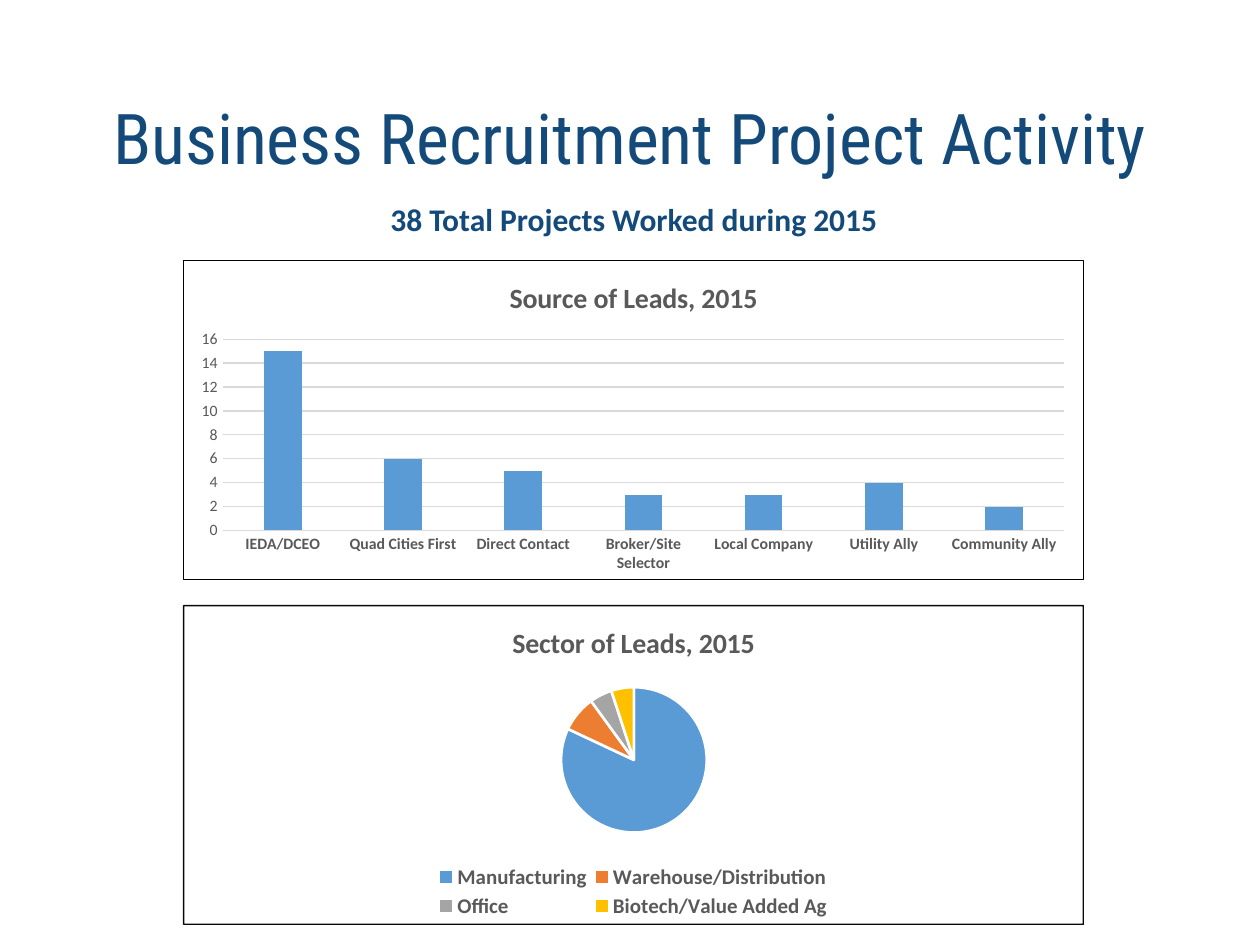
from lxml.etree import SubElement
from pptx import Presentation
from pptx.chart.data import CategoryChartData
from pptx.dml.color import RGBColor
from pptx.enum.chart import XL_CHART_TYPE, XL_LEGEND_POSITION, XL_TICK_MARK
from pptx.enum.text import MSO_ANCHOR, PP_ALIGN
from pptx.oxml import parse_xml
from pptx.oxml.ns import nsdecls, qn
from pptx.util import Pt

hue = RGBColor.from_string
NAVY, GRAY, PALE = "134A7A", "595959", "D9D9D9"


def px(*sizes):
    return [round(size * 914400 / 126) for size in sizes]


def write(frame, text, size, color, face="Calibri", bold=False, lead=None):
    para = frame.paragraphs[0]
    para.alignment = PP_ALIGN.CENTER
    para.line_spacing = lead
    run = para.add_run()
    run.text = text
    run.font.size = Pt(size)
    run.font.name = face
    run.font.bold = bold
    run.font.color.rgb = hue(color)


deck = Presentation()
deck.slide_width, deck.slide_height = px(1260, 945)
slide = deck.slides.add_slide(deck.slide_layouts[6])

title = slide.shapes.add_textbox(*px(0, 50, 1260, 183)).text_frame
title.word_wrap = True
title.vertical_anchor = MSO_ANCHOR.MIDDLE
write(title, "Business Recruitment Project Activity", 40, NAVY, "Roboto Condensed", lead=0.9)

charts = []
for kind, top, name, alpha, points in (
    (XL_CHART_TYPE.PIE, 605, "Sector of Leads, 2015", 96,
     {"Manufacturing": 82, "Warehouse/Distribution": 8, "Office": 5, "Biotech/Value Added Ag": 5}),
    (XL_CHART_TYPE.COLUMN_CLUSTERED, 260, "Source of Leads, 2015", 100,
     {"IEDA/DCEO": 15, "Quad Cities First": 6, "Direct Contact": 5, "Broker/Site Selector": 3,
      "Local Company": 3, "Utility Ally": 4, "Community Ally": 2}),
):
    data = CategoryChartData()
    data.categories = points.keys()
    data.add_series("Series 1", points.values())
    chart = slide.shapes.add_chart(kind, *px(183, top, 901, 320), data).chart
    chart.font.size = Pt(10)
    chart.font.name = "Calibri"
    chart.has_title = True
    write(chart.chart_title.text_frame, name, 16, GRAY, bold=True)
    chart.chart_title.include_in_layout = False
    chart.has_legend = False
    frame = parse_xml(
        f'<c:spPr {nsdecls("c", "a")}><a:solidFill><a:srgbClr val="FFFFFF"/></a:solidFill>'
        f'<a:ln w="9525"><a:solidFill><a:srgbClr val="000000"><a:alpha val="{alpha}000"/>'
        '</a:srgbClr></a:solidFill></a:ln></c:spPr>')
    chart.element.find(qn("c:txPr")).addprevious(frame)
    charts.append(chart)

pie, bars = charts
for point, color in enumerate(("5B9BD5", "ED7D31", "A5A5A5", "FFC000")):
    slice = pie.plots[0].series[0].points[point].format
    slice.fill.solid()
    slice.fill.fore_color.rgb = hue(color)
    slice.line.color.rgb = hue("FFFFFF")
    slice.line.width = Pt(1.5)
pie.has_legend = True
pie.legend.position = XL_LEGEND_POSITION.BOTTOM
pie.legend.include_in_layout = False

plot = bars.plots[0]
plot.vary_by_categories = False
plot.gap_width = 219
plot.overlap = -27
fill = plot.series[0].format.fill
fill.solid()
fill.fore_color.rgb = hue("5B9BD5")

cats, vals = bars.category_axis, bars.value_axis
for part, size, bold in ((cats.tick_labels, 9, True), (vals.tick_labels, 9, False), (pie.legend, 12, True)):
    part.font.size = Pt(size)
    part.font.bold = bold
    part.font.name = "Calibri"
    part.font.color.rgb = hue(GRAY)
for axis in cats, vals:
    axis.major_tick_mark = axis.minor_tick_mark = XL_TICK_MARK.NONE
vals.minimum_scale, vals.maximum_scale, vals.major_unit = 0, 16, 2
vals.format.line.fill.background()
for line in cats.format.line, vals.major_gridlines.format.line:
    line.color.rgb = hue(PALE)
    line.width = Pt(0.75)

for chart, tag, index, area in (
    (pie, "c:plotArea", 0, (378, 82, 146, 146)),
    (pie, "c:legend", 1, (248, 256, 405, 62)),
    (bars, "c:plotArea", 0, (39, 79, 843, 192)),
):
    node = chart.element.find(".//" + qn(tag))
    for old in node.findall(qn("c:layout")):
        node.remove(old)
    layout = parse_xml(f'<c:layout {nsdecls("c")}><c:manualLayout/></c:layout>')
    node.insert(index, layout)
    marks = [("xMode", "edge"), ("yMode", "edge")]
    if tag == "c:plotArea":
        marks.insert(0, ("layoutTarget", "inner"))
    marks += [(key, f"{size / full:.4f}") for key, size, full in zip("xywh", area, (901, 320) * 2)]
    for key, value in marks:
        SubElement(layout[0], qn("c:" + key)).set("val", value)

note = slide.shapes.add_textbox(*px(4, 194, 1260, 50)).text_frame
note.word_wrap = True
write(note, "38 Total Projects Worked during 2015", 18, NAVY, bold=True)

deck.save("out.pptx")
